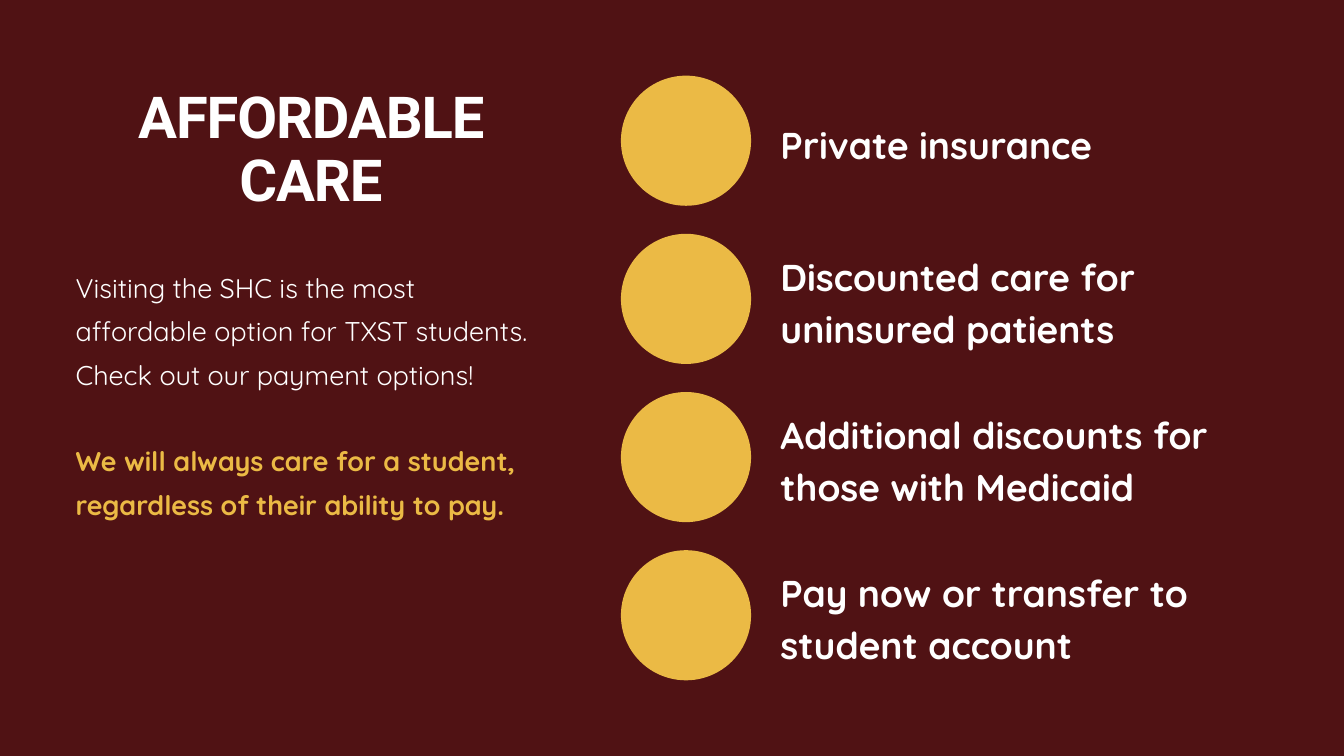
import pptx
import pptx.dml.color
import pptx.enum.shapes
import pptx.enum.text
import pptx.util

Cm = pptx.util.Cm
Pt = pptx.util.Pt
Align = pptx.enum.text.PP_ALIGN

HUES = {"maroon": "501214", "gold": "EBBA45", "white": "FFFFFF"}


class Deck:
    def __init__(self, wide, high):
        self.show = pptx.Presentation()
        self.show.slide_width = Cm(wide)
        self.show.slide_height = Cm(high)
        self.slide = self.show.slides.add_slide(self.show.slide_layouts[6])

    def hue(self, name):
        return pptx.dml.color.RGBColor.from_string(HUES[name])

    def ground(self, name):
        fill = self.slide.background.fill
        fill.solid()
        fill.fore_color.rgb = self.hue(name)

    def disc(self, left, top, size, name):
        oval = pptx.enum.shapes.MSO_SHAPE.OVAL
        shape = self.slide.shapes.add_shape(oval, Cm(left), Cm(top), Cm(size), Cm(size))
        shape.shadow.inherit = False
        shape.fill.solid()
        shape.fill.fore_color.rgb = self.hue(name)
        shape.line.fill.background()

    def box(self, left, top, wide, high):
        frame = self.slide.shapes.add_textbox(Cm(left), Cm(top), Cm(wide), Cm(high)).text_frame
        frame.word_wrap = True
        frame.margin_left = frame.margin_right = 0
        frame.margin_top = frame.margin_bottom = 0
        return frame

    def words(self, para, text, size, lead, face="Quicksand", name="white",
              bold=True, align=Align.LEFT, track=0):
        para.alignment = align
        para.line_spacing = Pt(lead)
        run = para.add_run()
        run.text = text
        font = run.font
        font.name = face
        font.size = Pt(size)
        font.bold = bold
        font.color.rgb = self.hue(name)
        if track:
            run._r.get_or_add_rPr().set("spc", str(track))


def main():
    deck = Deck(50.8, 28.58)
    deck.ground("maroon")

    title = deck.box(2.86, 3.25, 17.78, 5.33)
    deck.words(title.paragraphs[0], "AFFORDABLE CARE", 62, 68.2,
               face="Roboto", align=Align.CENTER, track=-120)

    body = deck.box(2.86, 9.86, 17.78, 11.18)
    deck.words(body.paragraphs[0],
               "Visiting the SHC is the most affordable option for TXST students. "
               "Check out our payment options!", 29, 46.4, bold=False)
    pledge = body.add_paragraph()
    pledge.space_before = Pt(46.4)
    deck.words(pledge,
               "We will always care for a student, regardless of their ability to pay.",
               29, 46.4, name="gold")

    plans = [
        ("Private insurance", 1),
        ("Discounted care for uninsured patients", 2),
        ("Additional discounts for those with Medicaid", 2),
        ("Pay now or transfer to student account", 2),
    ]
    size, pitch, line = 4.92, 5.98, 1.98
    for row, (text, lines) in enumerate(plans):
        top = 2.86 + row * pitch
        deck.disc(23.47, top, size, "gold")
        high = lines * line
        label = deck.box(29.5, top + (size - high) / 2, 18.47, high)
        deck.words(label.paragraphs[0], text, 40, 56)

    deck.show.save("out.pptx")


if __name__ == "__main__":
    main()
